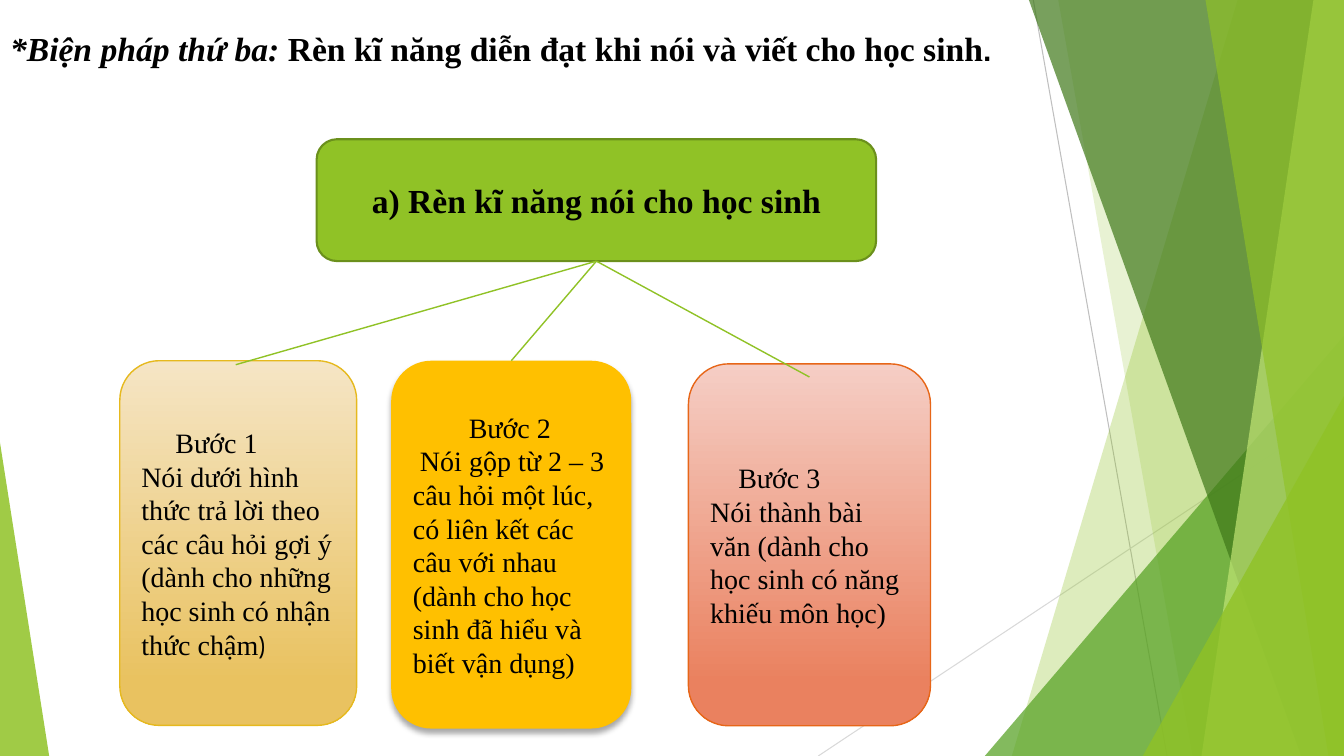
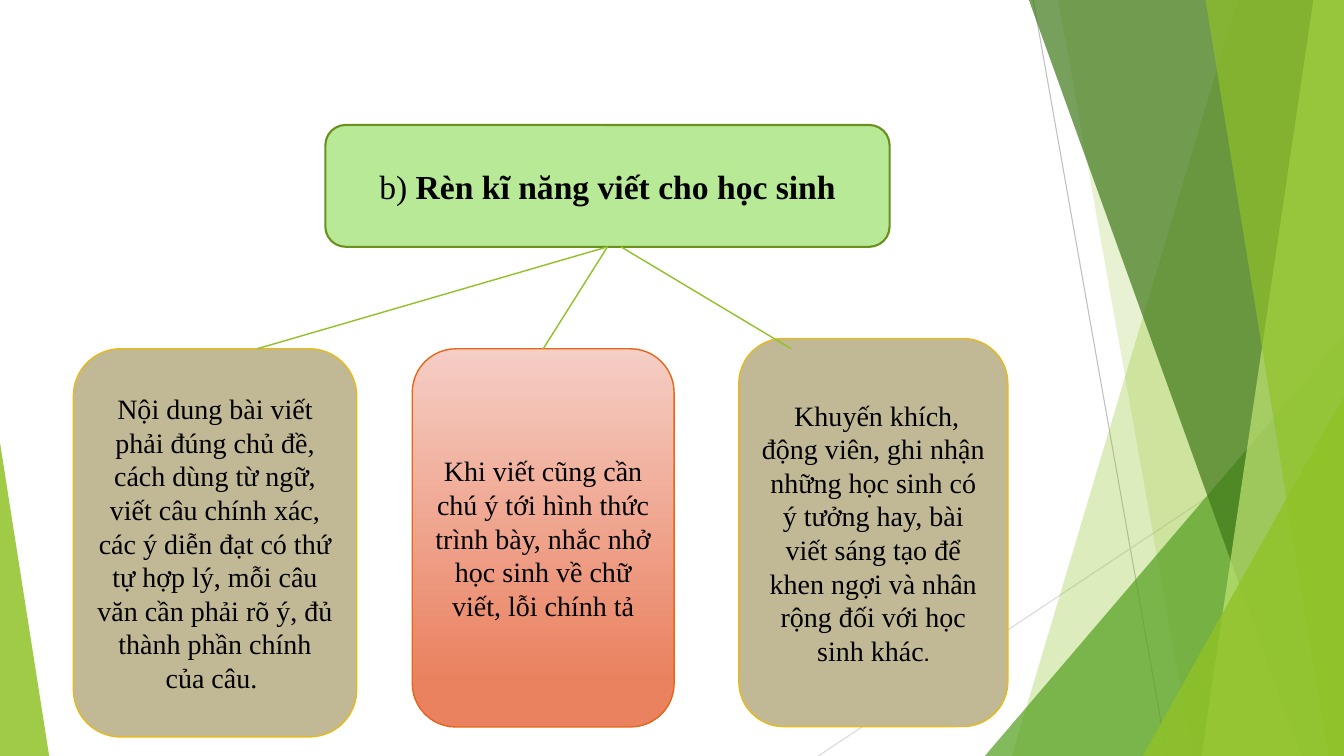
import pptx
import pptx.util
import pptx.dml.color
import pptx.enum.dml
import pptx.enum.shapes
import pptx.enum.text
import pptx.oxml
import pptx.oxml.ns
import lxml.etree

Cm = pptx.util.Cm
Pt = pptx.util.Pt
RGB = pptx.dml.color.RGBColor
SHAPE = pptx.enum.shapes.MSO_SHAPE
ALIGN = pptx.enum.text.PP_ALIGN
ANCHOR = pptx.enum.text.MSO_ANCHOR
qn = pptx.oxml.ns.qn

WIDTH, HEIGHT = 33.87, 19.05
SERIF, SANS = "Times New Roman", "Cabin"

BLACK = RGB(0x00, 0x00, 0x00)
WHITE = RGB(0xFF, 0xFF, 0xFF)
GREEN = RGB(0x90, 0xC2, 0x26)
MID_GREEN = RGB(0x54, 0xA0, 0x21)
DARK_GREEN = RGB(0x3F, 0x78, 0x19)
LIME = RGB(0xC0, 0xE4, 0x74)
MINT = RGB(0xB7, 0xE9, 0x96)
OLIVE = RGB(0x6B, 0x90, 0x1C)
AMBER = RGB(0xFF, 0xC0, 0x00)
KHAKI = RGB(0xC1, 0xB9, 0x95)
GOLD = RGB(0xE6, 0xB9, 0x1E)
ORANGE = RGB(0xE7, 0x66, 0x18)
GREY = RGB(0xBF, 0xBF, 0xBF)
PALE_GREY = RGB(0xD9, 0xD9, 0xD9)
SAND = (RGB(0xF5, 0xE5, 0xC5), RGB(0xE9, 0xC2, 0x60))
CORAL = (RGB(0xF5, 0xCE, 0xC5), RGB(0xEA, 0x81, 0x5F))


def add_line(s, x1, y1, x2, y2, color, width):
    line = s.shapes.add_connector(
        pptx.enum.shapes.MSO_CONNECTOR.STRAIGHT, Cm(x1), Cm(y1), Cm(x2), Cm(y2))
    line.line.color.rgb = color
    line.line.width = Pt(width)
    lxml.etree.SubElement(line.element.spPr, qn("a:effectLst"))
    return line


def paint_facet(sp, color, opacity):
    sp.shadow.inherit = False
    sp.fill.solid()
    sp.fill.fore_color.rgb = color
    sp.line.fill.background()
    clr = sp.element.spPr.find(qn("a:solidFill")).find(qn("a:srgbClr"))
    lxml.etree.SubElement(clr, qn("a:alpha"), val=str(opacity * 1000))


def add_band(s, top_x, bottom_x, color, opacity):
    ff = s.shapes.build_freeform(Cm(top_x), 0)
    ff.add_line_segments([(Cm(WIDTH), 0), (Cm(WIDTH), Cm(HEIGHT)), (Cm(bottom_x), Cm(HEIGHT))])
    paint_facet(ff.convert_to_shape(), color, opacity)


def add_corner(s, left, top, width, apex, color, opacity):
    sp = s.shapes.add_shape(SHAPE.ISOSCELES_TRIANGLE, Cm(left), Cm(top), Cm(width), Cm(HEIGHT - top))
    sp.adjustments[0] = apex
    paint_facet(sp, color, opacity)


def decorate_master(prs, s):
    kept = len(s.shapes)
    add_line(s, 26.04, 0, 29.41, HEIGHT, GREY, 0.75)
    add_line(s, WIDTH, 10.24, 20.62, HEIGHT, PALE_GREY, 0.75)
    add_band(s, 31.19, 25.5, GREEN, 30)
    add_band(s, 26.67, 30.05, GREEN, 20)
    add_corner(s, 24.82, 8.46, 9.05, 1, MID_GREEN, 72)
    add_band(s, 25.93, 32.79, DARK_GREEN, 70)
    add_band(s, 33.1, 30.28, LIME, 70)
    add_band(s, 30.38, 33.48, GREEN, 65)
    add_corner(s, 28.8, 9.98, 5.07, 1, GREEN, 80)
    add_corner(s, 0, 11.15, 1.24, 0, GREEN, 85)
    for number, sp in enumerate(list(s.shapes)[kept:], 101):
        sp.element[0][0].set("id", str(number))
        prs.slide_master.shapes.element.append(sp.element)


def write_paragraph(p, runs, size, align, bold=None, indent=0):
    p.alignment = align
    p.font.size = Pt(size)
    p.font.name = SERIF
    p.font.color.rgb = BLACK
    p.font.bold = bold
    if indent:
        p._p.get_or_add_pPr().set("indent", str(Cm(indent)))
    for text, style in runs:
        r = p.add_run()
        r.text = text
        for name, value in style.items():
            setattr(r.font, name, value)


def add_title(s, runs):
    title = s.shapes.title
    title.left, title.top, title.width, title.height = Cm(0), Cm(0.43), Cm(WIDTH), Cm(2.62)
    tf = title.text_frame
    tf.word_wrap = True
    tf.auto_size = pptx.enum.text.MSO_AUTO_SIZE.NONE
    tf.vertical_anchor = ANCHOR.TOP
    p = tf.paragraphs[0]
    write_paragraph(p, runs, 24, ALIGN.JUSTIFY, True)
    p.line_spacing = 1.15


def add_box(s, left, top, width, height, fill, outline, line_width):
    sp = s.shapes.add_shape(SHAPE.ROUNDED_RECTANGLE, Cm(left), Cm(top), Cm(width), Cm(height))
    sp.shadow.inherit = False
    if isinstance(fill, RGB):
        sp.fill.solid()
        sp.fill.fore_color.rgb = fill
    else:
        sp.fill.gradient()
        sp.fill.gradient_angle = 270
        for stop, position, color in zip(sp.fill.gradient_stops, (0, 0.88), fill):
            stop.position = position
            stop.color.rgb = color
    if outline is None:
        sp.line.fill.background()
        add_shadow(sp)
    else:
        sp.line.color.rgb = outline
        sp.line.width = Pt(line_width)
    sp.text_frame.word_wrap = True
    sp.text_frame.vertical_anchor = ANCHOR.MIDDLE
    return sp


def add_shadow(sp):
    effects = sp.element.spPr.find(qn("a:effectLst"))
    shadow = lxml.etree.SubElement(
        effects, qn("a:outerShdw"), blurRad=str(Pt(4)), dist=str(Pt(3)),
        dir="5400000", algn="ctr", rotWithShape="0")
    clr = lxml.etree.SubElement(shadow, qn("a:srgbClr"), val="000000")
    lxml.etree.SubElement(clr, qn("a:alpha"), val="35000")


def add_diagram(s, left, top, heading, cards, align, links):
    x, width, fill, runs = heading
    head = add_box(s, left + x, top, width, 3.07, fill, OLIVE, 1.5)
    write_paragraph(head.text_frame.paragraphs[0], runs, 24, ALIGN.CENTER)

    boxes = []
    for (x, y, width, height), fill, outline, paragraphs in cards:
        box = add_box(s, left + x, top + y, width, height, fill, outline, 1)
        tf = box.text_frame
        for i, (indent, runs) in enumerate(paragraphs):
            p = tf.paragraphs[0] if i == 0 else tf.add_paragraph()
            write_paragraph(p, runs, 20, align, indent=indent)
        boxes.append(box)

    for start, end in links:
        x1, y1 = start or (0, 0)
        x2, y2 = end or (0, 0)
        line = add_line(s, left + x1, top + y1, left + x2, top + y2, GREEN, 1)
        if start is None:
            line.begin_connect(head, 2)
        if end is None:
            line.end_connect(boxes[1], 0)


def speaking_slide(prs):
    s = prs.slides.add_slide(prs.slide_layouts[5])
    add_title(s, [
        ("*Biện pháp thứ ba: ", {"italic": True}),
        ("Rèn kĩ năng diễn đạt khi nói và viết cho học sinh", {}),
        (".", {"name": SANS}),
    ])
    heading = (4.96, 14.1, GREEN, [("a) Rèn kĩ năng nói cho học sinh", {"bold": True})])
    cards = [
        ((0, 5.58, 5.97, 9.19), SAND, GOLD, [
            (0.86, [("Bước 1", {})]),
            (0, [("Nói dưới hình thức trả lời theo các câu hỏi gợi ý "
                  "(dành cho những học sinh có nhận thức chậm", {}),
                 (")", {"name": SANS, "size": Pt(18)})]),
        ]),
        ((6.84, 5.58, 6.05, 9.27), AMBER, None, [
            (1.41, [("Bước 2", {})]),
            (0.18, [("Nói gộp từ 2 – 3 câu hỏi một lúc, có liên kết các câu với nhau "
                     "(dành cho học sinh đã hiểu và biết vận dụng)", {})]),
        ]),
        ((14.33, 5.66, 6.1, 9.12), CORAL, ORANGE, [
            (0.71, [("Bước 3", {})]),
            (0, [("Nói thành bài văn (dành cho học sinh có năng khiếu môn học)", {})]),
        ]),
    ]
    links = [(None, (2.92, 5.68)), (None, None), (None, (17.38, 5.99))]
    add_diagram(s, 3.02, 3.51, heading, cards, ALIGN.LEFT, links)
    return s


def writing_slide(prs):
    s = prs.slides.add_slide(prs.slide_layouts[6])
    heading = (6.35, 14.22, MINT, [
        ("b) ", {}), ("Rèn kĩ năng viết cho học sinh", {"bold": True})])
    cards = [
        ((0, 5.64, 7.14, 9.78), KHAKI, GOLD, [
            (0, [("Nội dung bài viết phải đúng chủ đề, cách dùng từ ngữ, viết câu chính xác, "
                  "các ý diễn đạt có thứ tự hợp lý, mỗi câu văn cần phải rõ ý, "
                  "đủ thành phần chính của câu. ", {})]),
        ]),
        ((8.54, 5.64, 6.6, 9.53), CORAL, ORANGE, [
            (0, [("Khi viết cũng cần chú ý tới hình thức trình bày, "
                  "nhắc nhở học sinh về chữ viết, lỗi chính tả", {})]),
        ]),
        ((16.77, 5.38, 6.78, 9.78), KHAKI, GOLD, [
            (0, [(" Khuyến khích, động viên, ghi nhận những học sinh có ý tưởng hay, "
                  "bài viết sáng tạo để khen ngợi và nhân rộng đối với học sinh khác", {}),
                 (".", {"name": SANS})]),
        ]),
    ]
    links = [(None, (4.63, 5.64)), (None, None), ((13.8, 3.07), (18.09, 5.64))]
    add_diagram(s, 1.85, 3.15, heading, cards, ALIGN.CENTER, links)


def main():
    prs = pptx.Presentation()
    prs.slide_width, prs.slide_height = Cm(WIDTH), Cm(HEIGHT)
    background = prs.slide_master.background.fill
    background.solid()
    background.fore_color.rgb = WHITE
    decorate_master(prs, speaking_slide(prs))
    writing_slide(prs)
    prs.save("out.pptx")


if __name__ == "__main__":
    main()
